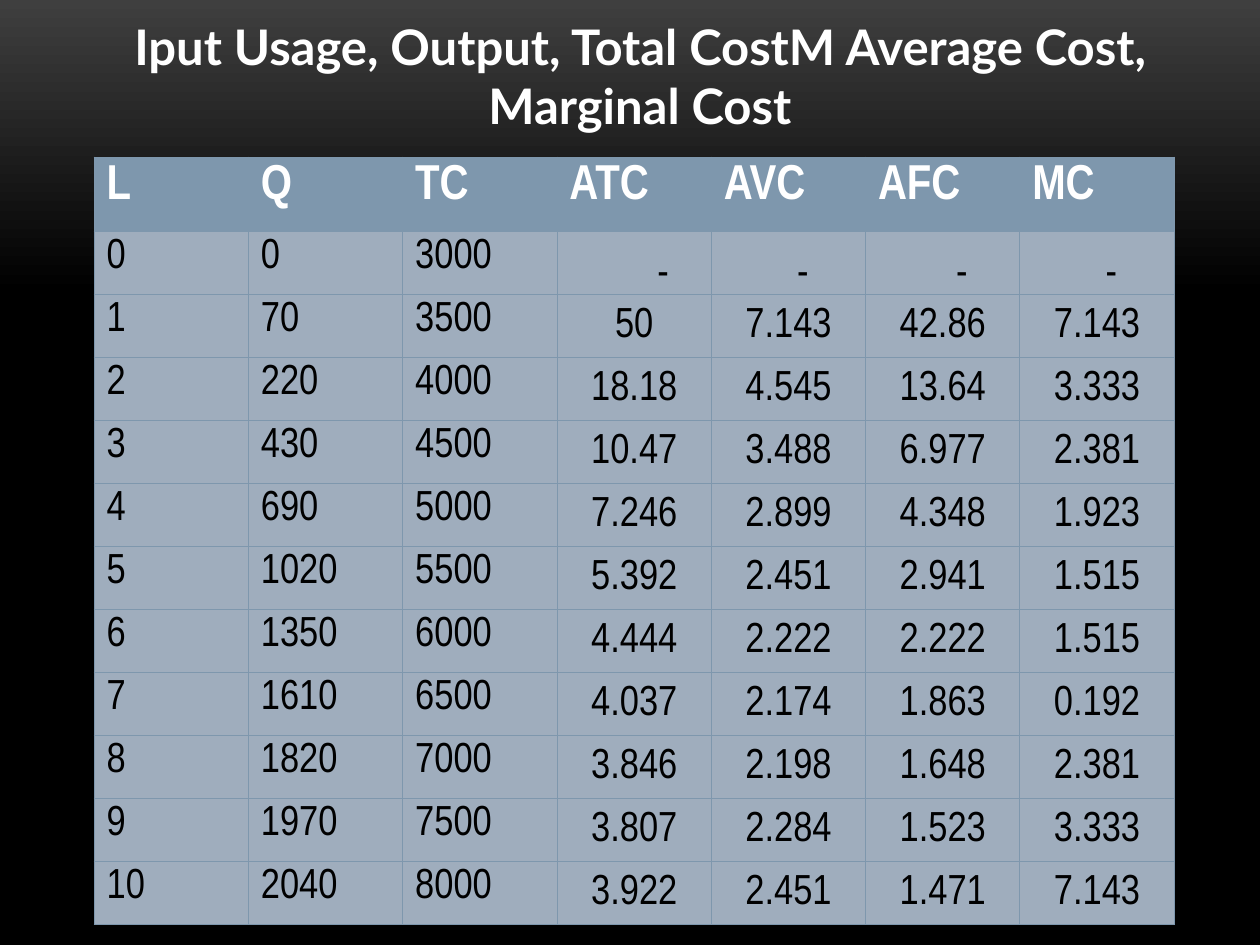
from copy import deepcopy
from dataclasses import dataclass

from lxml import etree
from pptx import Presentation
from pptx import util as u
from pptx.dml.color import RGBColor
from pptx.enum import text
from pptx.oxml.ns import qn

WHITE, BLACK, HEADER_BLUE, BODY_BLUE = "FFFFFF", "000000", "7E97AD", "9FADBD"

HEADINGS = ["L", "Q", "TC", "ATC", "AVC", "AFC", "MC"]
COSTS = [
    ["0", "0", "3000", "-", "-", "-", "-"],
    ["1", "70", "3500", "50", "7.143", "42.86", "7.143"],
    ["2", "220", "4000", "18.18", "4.545", "13.64", "3.333"],
    ["3", "430", "4500", "10.47", "3.488", "6.977", "2.381"],
    ["4", "690", "5000", "7.246", "2.899", "4.348", "1.923"],
    ["5", "1020", "5500", "5.392", "2.451", "2.941", "1.515"],
    ["6", "1350", "6000", "4.444", "2.222", "2.222", "1.515"],
    ["7", "1610", "6500", "4.037", "2.174", "1.863", "0.192"],
    ["8", "1820", "7000", "3.846", "2.198", "1.648", "2.381"],
    ["9", "1970", "7500", "3.807", "2.284", "1.523", "3.333"],
    ["10", "2040", "8000", "3.922", "2.451", "1.471", "7.143"],
]
FIRST_AVERAGE = HEADINGS.index("ATC")
DASH_INDENTS = {"ATC": 1.16, "AVC": 0.58, "AFC": 0.77, "MC": 0.58}


@dataclass(frozen=True)
class CellStyle:
    fill: str
    color: str
    size: int
    bold: bool = False
    align: text.PP_ALIGN = text.PP_ALIGN.LEFT
    anchor: text.MSO_ANCHOR = text.MSO_ANCHOR.TOP
    margins: tuple[float, float, float, float] = (0.25, 0.13, 0.25, 0.13)


HEADING = CellStyle(HEADER_BLUE, WHITE, 28, bold=True)
QUANTITY = CellStyle(BODY_BLUE, BLACK, 24)


def rgb(color: str) -> RGBColor:
    return RGBColor.from_string(color)


def average_style(heading: str, value: str) -> CellStyle:
    is_dash = value == "-"
    indent = DASH_INDENTS[heading] if is_dash else 0
    anchor = text.MSO_ANCHOR.BOTTOM if is_dash else text.MSO_ANCHOR.MIDDLE
    return CellStyle(BODY_BLUE, BLACK, 24, align=text.PP_ALIGN.CENTER,
                     anchor=anchor, margins=(0.03 + indent, 0.03, 0.03, 0))


def style_font(font, name: str, size: int, color: str, bold: bool) -> None:
    font.name, font.size, font.bold = name, u.Pt(size), bold
    font.color.rgb = rgb(color)


def add_borders(cell, color: str, width: float) -> None:
    properties = cell._tc.get_or_add_tcPr()
    for index, side in enumerate(("lnL", "lnR", "lnT", "lnB")):
        border = etree.Element(qn(f"a:{side}"), w=str(u.Pt(width)))
        solid = etree.SubElement(border, qn("a:solidFill"))
        etree.SubElement(solid, qn("a:srgbClr"), val=color)
        properties.insert(index, border)


def fill_cell(cell, value: str, style: CellStyle) -> None:
    cell.text = value
    cell.fill.solid()
    cell.fill.fore_color.rgb = rgb(style.fill)
    cell.vertical_anchor = style.anchor
    (cell.margin_left, cell.margin_top,
     cell.margin_right, cell.margin_bottom) = map(u.Cm, style.margins)
    paragraph = cell.text_frame.paragraphs[0]
    paragraph.alignment = style.align
    style_font(paragraph.font, "Arial Narrow", style.size, style.color, style.bold)
    add_borders(cell, HEADER_BLUE, 0.75)


def paint_background(slide) -> None:
    fill = slide.background.fill
    fill.gradient()
    fill.gradient_angle = 270
    top, dark = fill.gradient_stops
    top.position, top.color.rgb = 0, rgb("3F3F3F")
    dark.position, dark.color.rgb = 1, rgb(BLACK)
    last = slide.background._cSld.findall(".//" + qn("a:gs"))[-1]
    middle = deepcopy(last)
    middle.set("pos", "31000")
    last.addprevious(middle)


def add_title(slide, wording: str) -> None:
    title = slide.shapes.title
    title.left, title.top = u.Cm(1.47), u.Cm(0.2)
    title.width, title.height = u.Cm(22.86), u.Cm(2.64)
    frame = title.text_frame
    frame.text = wording
    frame.word_wrap = True
    frame.auto_size = text.MSO_AUTO_SIZE.NONE
    frame.vertical_anchor = text.MSO_ANCHOR.TOP
    paragraph = frame.paragraphs[0]
    paragraph.alignment = text.PP_ALIGN.CENTER
    style_font(paragraph.font, "Lato", 28, WHITE, True)


def add_cost_table(slide) -> None:
    header_height, row_height, column_width = u.Cm(1.5), u.Cm(1.27), u.Cm(3.11)
    table = slide.shapes.add_table(
        len(COSTS) + 1, len(HEADINGS), u.Cm(1.9), u.Cm(3.17),
        column_width * len(HEADINGS), header_height + row_height * len(COSTS)).table
    for column in table.columns:
        column.width = column_width
    for index, row in enumerate(table.rows):
        row.height = row_height if index else header_height
    for column, heading in enumerate(HEADINGS):
        fill_cell(table.cell(0, column), heading, HEADING)
        for row, costs in enumerate(COSTS, start=1):
            value = costs[column]
            style = QUANTITY if column < FIRST_AVERAGE else average_style(heading, value)
            fill_cell(table.cell(row, column), value, style)


def main() -> None:
    deck = Presentation()
    deck.slide_width, deck.slide_height = u.Cm(25.4), u.Cm(19.05)
    slide = deck.slides.add_slide(deck.slide_layouts.get_by_name("Title Only"))
    paint_background(slide)
    add_title(slide, "Iput Usage, Output, Total CostM Average Cost, Marginal Cost")
    add_cost_table(slide)
    deck.save("out.pptx")


if __name__ == "__main__":
    main()
